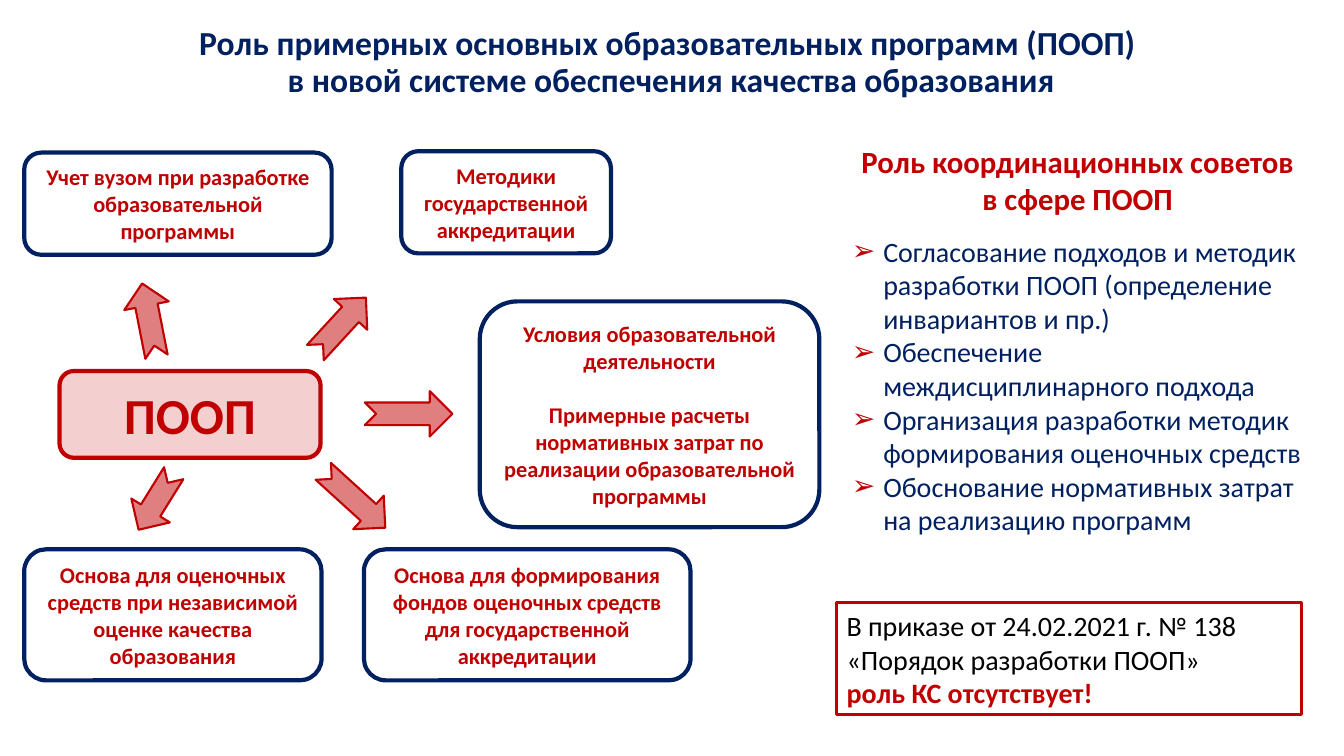
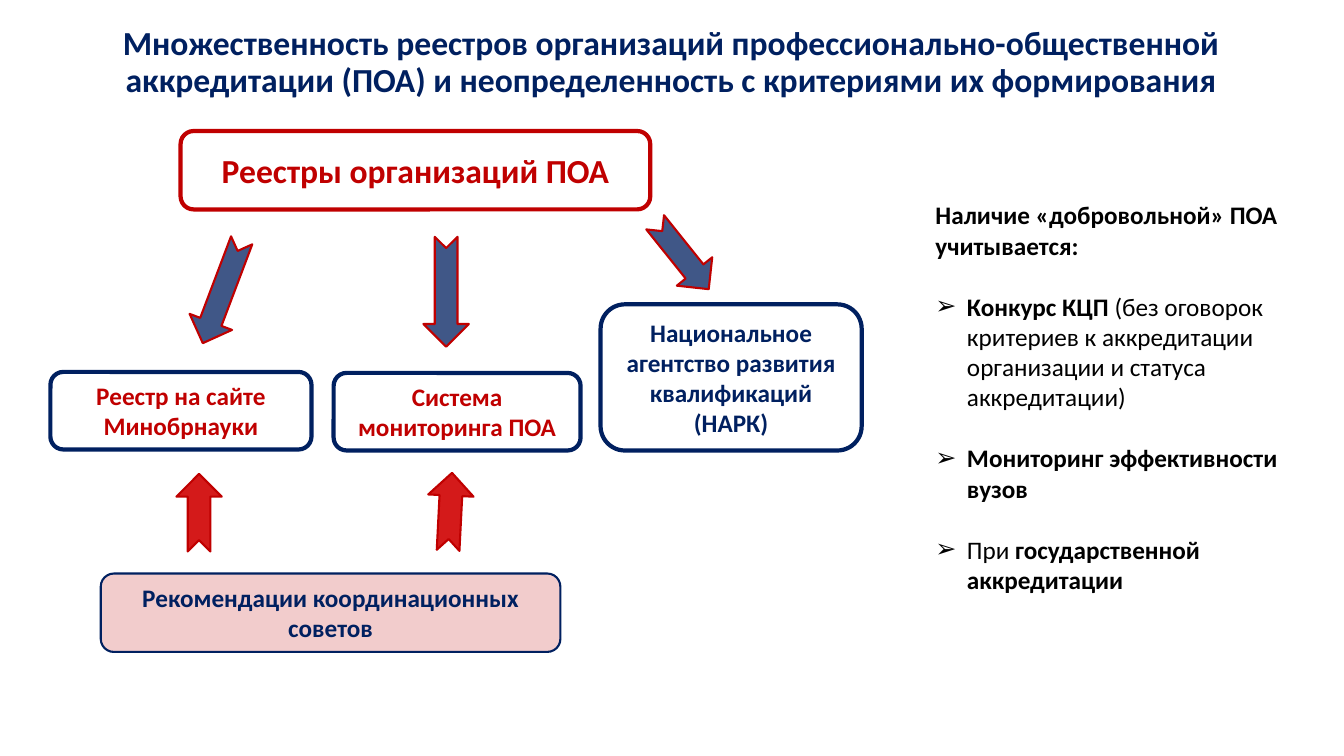
from lxml import etree
from pptx import Presentation
from pptx.dml.color import RGBColor
from pptx.enum.shapes import MSO_SHAPE
from pptx.enum.text import MSO_ANCHOR, MSO_AUTO_SIZE, PP_ALIGN
from pptx.oxml.ns import qn
from pptx.util import Pt

ROUNDED = MSO_SHAPE.ROUNDED_RECTANGLE
RECTANGLE = MSO_SHAPE.RECTANGLE
ARROW = MSO_SHAPE.NOTCHED_RIGHT_ARROW
MIDDLE = MSO_ANCHOR.MIDDLE
TOP = MSO_ANCHOR.TOP
FIXED = MSO_AUTO_SIZE.NONE
CENTER = PP_ALIGN.CENTER
LEFT = PP_ALIGN.LEFT

NAVY = RGBColor(0x00, 0x20, 0x60)
CRIMSON = RGBColor(0xC0, 0x00, 0x00)
SCARLET = RGBColor(0xD4, 0x1A, 0x1A)
BLACK = RGBColor(0x00, 0x00, 0x00)

FONT = "Calibri"
INDENT = Pt(22.5)
ARROW_HEIGHT = 32.4


def text_format(size, bold=False):
    return {"name": FONT, "size": Pt(size), "bold": bold}


TITLE = text_format(24, True)
HEADING = text_format(22, True)
HUB = text_format(36, True)
LARGE = text_format(20)
LARGE_BOLD = text_format(20, True)
MEDIUM = text_format(18)
MEDIUM_BOLD = text_format(18, True)
SMALL_BOLD = text_format(16, True)


def place(shape, bounds):
    for side, length in zip(("left", "top", "width", "height"), bounds):
        setattr(shape, side, Pt(length))


def set_frame(frame, anchor):
    settings = {"word_wrap": True, "auto_size": FIXED, "vertical_anchor": anchor}
    for name, value in settings.items():
        setattr(frame, name, value)


def add_run(paragraph, text, style, color):
    run = paragraph.add_run()
    run.text = text
    for name, value in style.items():
        setattr(run.font, name, value)
    run.font.color.rgb = color


def set_bullet(paragraph, color):
    properties = paragraph._p.get_or_add_pPr()
    properties.set("marL", str(INDENT))
    properties.set("indent", str(-INDENT))
    bullet_color = etree.SubElement(properties, qn("a:buClr"))
    etree.SubElement(bullet_color, qn("a:srgbClr")).set("val", str(color))
    etree.SubElement(properties, qn("a:buChar")).set("char", "➢")


def clear_bullet(paragraph):
    properties = paragraph._p.get_or_add_pPr()
    properties.set("marL", "0")
    properties.set("indent", "0")
    etree.SubElement(properties, qn("a:buNone"))


def write_paragraphs(frame, paragraphs, align, gap=0):
    for index, runs in enumerate(paragraphs):
        paragraph = frame.paragraphs[0] if index == 0 else frame.add_paragraph()
        paragraph.alignment = align
        paragraph.space_before = Pt(gap if index else 0)
        for run in runs:
            add_run(paragraph, *run)


def add_slide(deck, title_lines):
    slide = deck.slides.add_slide(deck.slide_layouts[1])
    title = slide.shapes.title
    place(title, (14.4, 25, 930, 40))
    set_frame(title.text_frame, MIDDLE)
    paragraph = title.text_frame.paragraphs[0]
    paragraph.alignment = CENTER
    paragraph.line_spacing = 0.9
    for index, line in enumerate(title_lines):
        if index:
            paragraph.add_line_break()
        add_run(paragraph, line, TITLE, NAVY)
    return slide


def add_list(slide, bounds, heading, heading_align, items, bullet_color, first_gap, gap):
    body = slide.placeholders[1]
    place(body, bounds)
    frame = body.text_frame
    set_frame(frame, TOP)
    clear_bullet(frame.paragraphs[0])
    write_paragraphs(frame, [heading], heading_align)
    for index, runs in enumerate(items):
        paragraph = frame.add_paragraph()
        set_bullet(paragraph, bullet_color)
        paragraph.space_before = Pt(gap if index else first_gap)
        for run in runs:
            add_run(paragraph, *run)


def add_figure(slide, kind, bounds, outline, weight, fill=None, opacity=100):
    figure = slide.shapes.add_shape(kind, *map(Pt, bounds))
    figure.shadow.inherit = False
    figure.line.color.rgb = outline
    figure.line.width = Pt(weight)
    if fill is None:
        figure.fill.background()
    else:
        figure.fill.solid()
        figure.fill.fore_color.rgb = fill
        if opacity < 100:
            color = figure._element.spPr.find(qn("a:solidFill"))[0]
            etree.SubElement(color, qn("a:alpha")).set("val", str(opacity * 1000))
    return figure


def add_box(slide, bounds, paragraphs, outline=NAVY, weight=3, kind=ROUNDED,
            align=CENTER, gap=0, fill=None, opacity=100):
    box = add_figure(slide, kind, bounds, outline, weight, fill, opacity)
    set_frame(box.text_frame, MIDDLE)
    write_paragraphs(box.text_frame, paragraphs, align, gap)


def add_arrow(slide, left, top, length, angle, fill, opacity):
    bounds = (left, top, length, ARROW_HEIGHT)
    arrow = add_figure(slide, ARROW, bounds, CRIMSON, 1.5, fill, opacity)
    arrow.rotation = angle


def build_role_slide(deck):
    slide = add_slide(deck, [
        "Роль примерных основных образовательных программ (ПООП) ",
        "в новой системе обеспечения качества образования",
    ])
    add_box(slide, (42.5, 265, 186.5, 62), [[("ПООП", HUB, CRIMSON)]],
            CRIMSON, fill=CRIMSON, opacity=19)
    duties = [
        "Согласование подходов и методик разработки ПООП (определение инвариантов и пр.)",
        "Обеспечение междисциплинарного подхода",
        "Организация разработки методик формирования оценочных средств",
        "Обоснование нормативных затрат на реализацию программ",
    ]
    add_list(slide, (601.2, 98.6, 337, 291),
             [("Роль координационных советов в сфере ПООП", HEADING, CRIMSON)], CENTER,
             [[(duty, LARGE, NAVY)] for duty in duties], CRIMSON, 12.2, 0)

    uses = [
        ((17.3, 109, 219.6, 73), ["Учет вузом при разработке образовательной программы"]),
        ((286.6, 108, 149.8, 73), ["Методики государственной аккредитации"]),
        ((260, 392.4, 233.3, 93.6), ["Основа для формирования фондов оценочных средств "
                                     "для государственной аккредитации"]),
        ((17.3, 392.4, 212.4, 93.6), ["Основа для оценочных средств при независимой "
                                      "оценке качества образования"]),
        ((342.7, 215.3, 242.6, 161.3), ["Условия образовательной деятельности",
                                        "Примерные расчеты нормативных затрат по "
                                        "реализации образовательной программы"]),
    ]
    for bounds, texts in uses:
        add_box(slide, bounds, [[(text, SMALL_BOLD, CRIMSON)] for text in texts], gap=19.5)

    for left, top, length, angle in [
        (216.7, 216, 53.3, 312.6),
        (260.6, 279.4, 62.6, 0),
        (223.2, 340.6, 59.8, 42.3),
        (80, 212.4, 53.3, 258.9),
        (87.8, 342, 47.5, 121.8),
    ]:
        add_arrow(slide, left, top, length, angle, CRIMSON, 50)

    add_box(slide, (597.6, 430.6, 332, 80), [
        [("В приказе от 24.02.2021 г. № 138 «Порядок разработки ПООП»", LARGE, BLACK)],
        [("роль КС отсутствует!", LARGE_BOLD, CRIMSON)],
    ], CRIMSON, 2.25, RECTANGLE, LEFT)


def build_registers_slide(deck):
    slide = add_slide(deck, [
        "Множественность реестров организаций профессионально-общественной "
        "аккредитации (ПОА) и неопределенность с критериями их формирования",
    ])
    add_box(slide, (129, 93.6, 335.5, 56), [[("Реестры организаций ПОА", TITLE, CRIMSON)]],
            CRIMSON)
    add_list(slide, (661, 139, 284.4, 291),
             [("Наличие «добровольной» ПОА учитывается:", MEDIUM_BOLD, BLACK)], LEFT, [
                 [("Конкурс КЦП ", MEDIUM_BOLD, BLACK),
                  ("(без оговорок критериев к аккредитации организации и статуса аккредитации)",
                   MEDIUM, BLACK)],
                 [("Мониторинг эффективности вузов", MEDIUM_BOLD, BLACK)],
                 [("При ", MEDIUM, BLACK),
                  ("государственной аккредитации", MEDIUM_BOLD, BLACK)],
             ], BLACK, 22, 22)

    for bounds, text, color in [
        ((36, 265.7, 186.5, 55.4), "Реестр на сайте Минобрнауки", CRIMSON),
        ((429, 217.4, 186.5, 104.4), "Национальное агентство развития квалификаций (НАРК)", NAVY),
        ((238.3, 266.4, 176.4, 55.4), "Система мониторинга ПОА", CRIMSON),
    ]:
        add_box(slide, bounds, [[(text, MEDIUM_BOLD, color)]])
    add_box(slide, (72, 409.7, 328.3, 56),
            [[("Рекомендации координационных советов", MEDIUM_BOLD, NAVY)]],
            weight=1.5, fill=CRIMSON, opacity=20)

    for left, top, length, angle, fill, opacity in [
        (119.5, 192.2, 78.5, 110.7, NAVY, 75),
        (279.4, 192.2, 78.5, 90, NAVY, 75),
        (456.5, 166.5, 61.2, 51.3, NAVY, 75),
        (114.5, 350, 55.4, 270, SCARLET, 100),
        (293.8, 349.2, 55.4, 272.9, SCARLET, 100),
    ]:
        add_arrow(slide, left, top, length, angle, fill, opacity)


def main():
    deck = Presentation()
    deck.slide_width = Pt(960)
    deck.slide_height = Pt(540)
    build_role_slide(deck)
    build_registers_slide(deck)
    deck.save("out.pptx")


if __name__ == "__main__":
    main()
